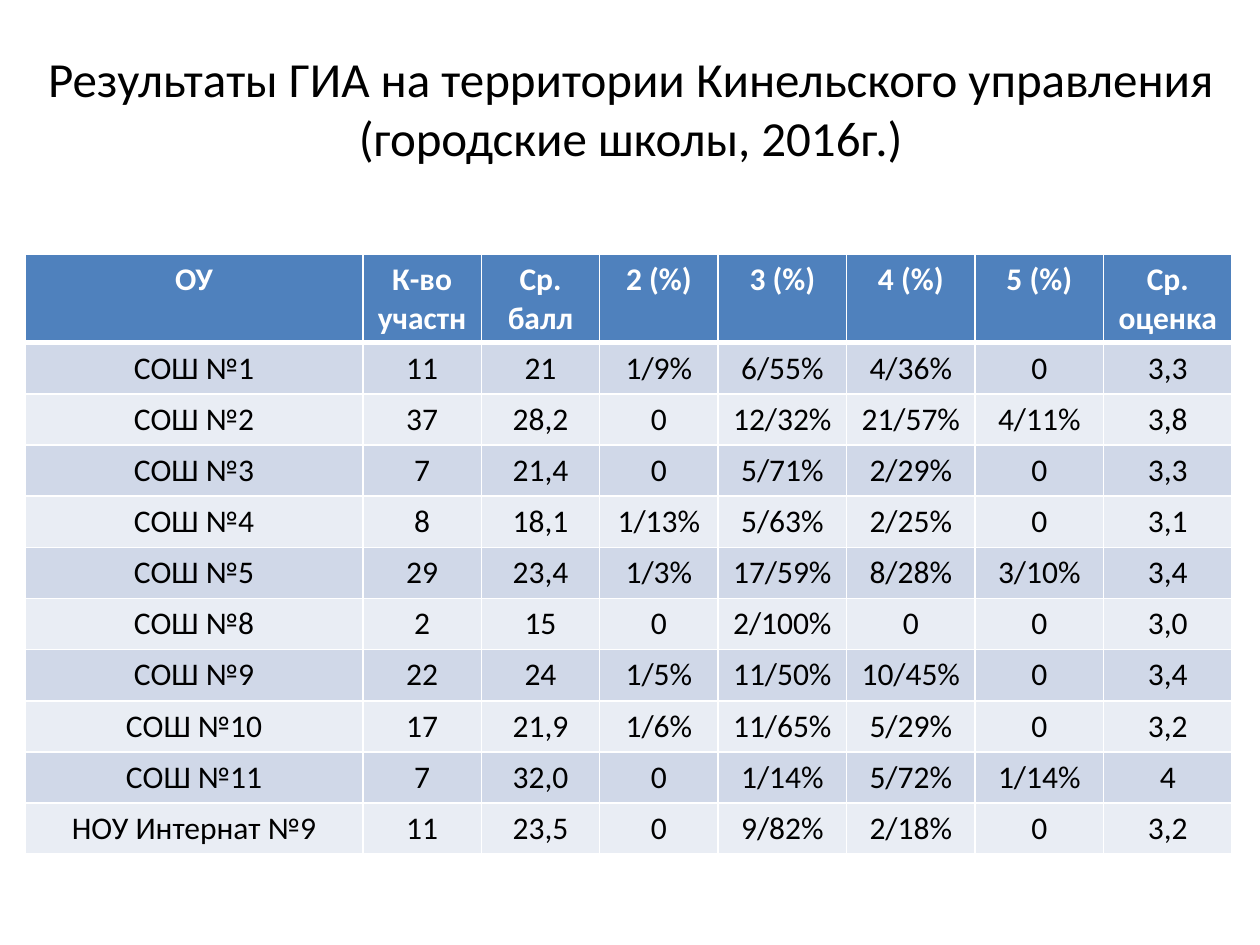
from lxml.etree import SubElement
from pptx import Presentation
from pptx.dml.color import RGBColor
from pptx.enum.text import MSO_ANCHOR, PP_ALIGN
from pptx.oxml.ns import qn
from pptx.util import Inches, Pt

LEFT, WIDTH = 0.2, 9.61
TABLE_TOP, TABLE_HIGH, HEAD_HIGH = 2.02, 4.76, 0.7
COLS = [2.68] + [0.94] * 3 + [1.02] * 4
WHITE, BLACK, BLUE = "FFFFFF", "000000", "4F81BD"
BANDS = ["D0D8E8", "E9EDF4"]

TITLE = "Результаты ГИА на территории Кинельского управления (городские школы, 2016г.)"
HEAD = ["ОУ", "К-во участн", "Ср. балл", "2 (%)", "3 (%)", "4 (%)", "5 (%)", "Ср. оценка"]
SCHOOLS = [
    ["СОШ №1", "11", "21", "1/9%", "6/55%", "4/36%", "0", "3,3"],
    ["СОШ №2", "37", "28,2", "0", "12/32%", "21/57%", "4/11%", "3,8"],
    ["СОШ №3", "7", "21,4", "0", "5/71%", "2/29%", "0", "3,3"],
    ["СОШ №4", "8", "18,1", "1/13%", "5/63%", "2/25%", "0", "3,1"],
    ["СОШ №5", "29", "23,4", "1/3%", "17/59%", "8/28%", "3/10%", "3,4"],
    ["СОШ №8", "2", "15", "0", "2/100%", "0", "0", "3,0"],
    ["СОШ №9", "22", "24", "1/5%", "11/50%", "10/45%", "0", "3,4"],
    ["СОШ №10", "17", "21,9", "1/6%", "11/65%", "5/29%", "0", "3,2"],
    ["СОШ №11", "7", "32,0", "0", "1/14%", "5/72%", "1/14%", "4"],
    ["НОУ Интернат №9", "11", "23,5", "0", "9/82%", "2/18%", "0", "3,2"],
]


def paint(fill, color):
    fill.solid()
    fill.fore_color.rgb = RGBColor.from_string(color)


def write(frame, text, size=18, color=BLACK, bold=False):
    frame.word_wrap = True
    para = frame.paragraphs[0]
    para.alignment = PP_ALIGN.CENTER
    run = para.add_run()
    run.text = text
    run.font.name = "Calibri"
    run.font.size = Pt(size)
    run.font.bold = bold
    paint(run.font.fill, color)


def edge(cell, top=1, bottom=1):
    """Draw white borders; top and bottom are widths in points."""
    props = cell._tc.get_or_add_tcPr()
    for tag, wide in (("lnL", 1), ("lnR", 1), ("lnT", top), ("lnB", bottom)):
        line = SubElement(props, qn(f"a:{tag}"), w=str(Pt(wide)))
        SubElement(SubElement(line, qn("a:solidFill")), qn("a:srgbClr"), val=WHITE)


def add_title(slide):
    box = slide.shapes.add_textbox(Inches(LEFT), Inches(0.3), Inches(WIDTH), Inches(1.56))
    frame = box.text_frame
    frame.vertical_anchor = MSO_ANCHOR.MIDDLE
    frame.margin_bottom = Inches(0.5)
    write(frame, TITLE, size=28)


def add_grid(slide):
    rows = [HEAD] + SCHOOLS
    frame = slide.shapes.add_table(
        len(rows), len(COLS), Inches(LEFT), Inches(TABLE_TOP), Inches(WIDTH), Inches(TABLE_HIGH)
    )
    table = frame.table
    for col, wide in zip(table.columns, COLS):
        col.width = Inches(wide)
    for r, row in enumerate(rows):
        head = r == 0
        high = HEAD_HIGH if head else (TABLE_HIGH - HEAD_HIGH) / len(SCHOOLS)
        table.rows[r].height = Inches(high)
        for c, text in enumerate(row):
            cell = table.cell(r, c)
            edge(cell, top=3 if r == 1 else 1, bottom=3 if head else 1)
            paint(cell.fill, BLUE if head else BANDS[(r - 1) % 2])
            write(cell.text_frame, text, color=WHITE if head else BLACK, bold=head)


def main():
    deck = Presentation()
    deck.slide_width, deck.slide_height = Inches(10), Inches(7.5)
    slide = deck.slides.add_slide(deck.slide_layouts[6])
    paint(slide.background.fill, WHITE)
    add_title(slide)
    add_grid(slide)
    deck.save("out.pptx")


if __name__ == "__main__":
    main()
